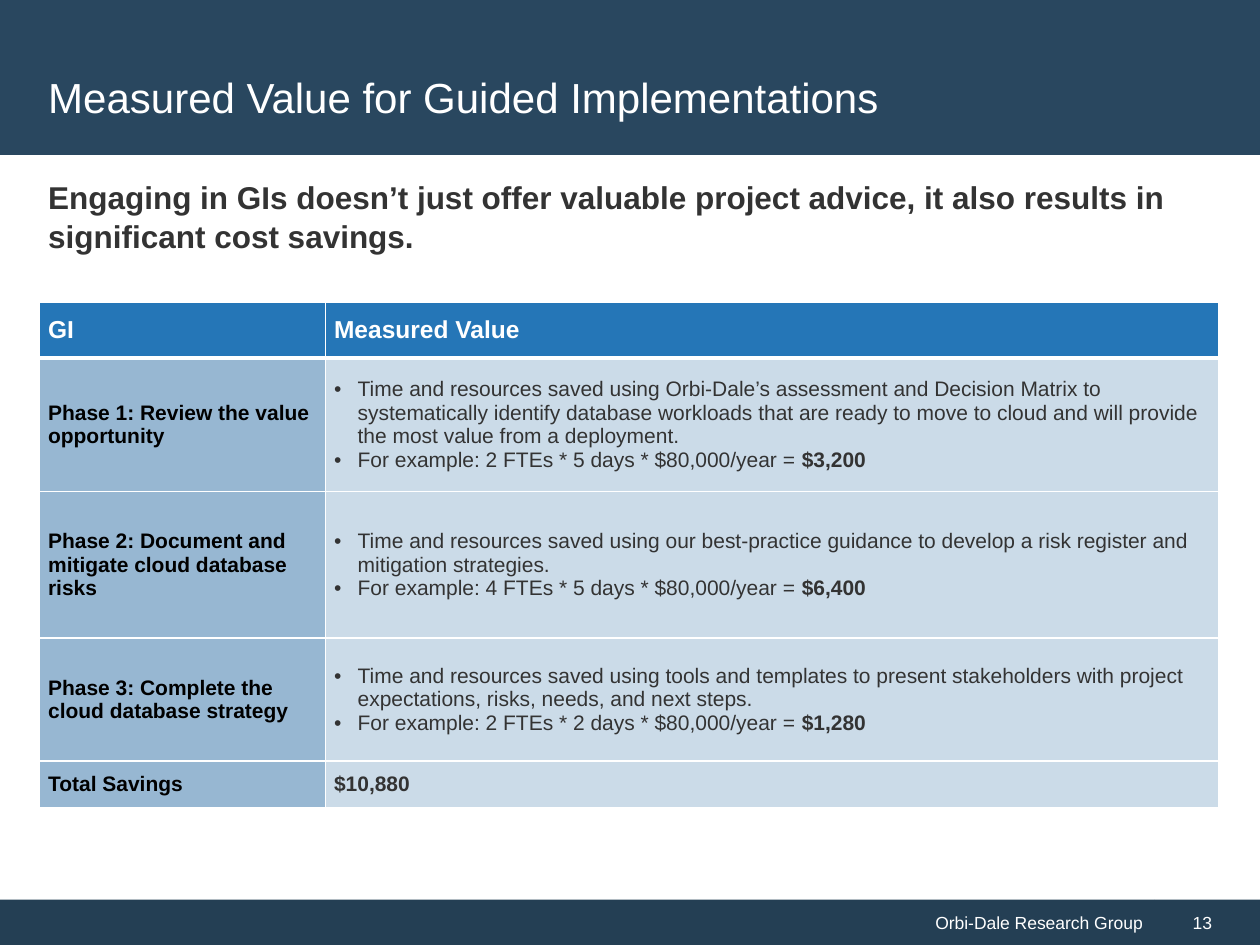
"""Build the slide on the measured value of guided implementations."""
from lxml import etree
from pptx import Presentation
from pptx.dml.color import RGBColor
from pptx.enum.shapes import MSO_SHAPE
from pptx.enum.text import MSO_ANCHOR, PP_ALIGN
from pptx.oxml.ns import qn
from pptx.util import Pt

RECTANGLE = MSO_SHAPE.RECTANGLE
TOP, MIDDLE = MSO_ANCHOR.TOP, MSO_ANCHOR.MIDDLE
LEFT, RIGHT = PP_ALIGN.LEFT, PP_ALIGN.RIGHT
WHITE = RGBColor(0xFF, 0xFF, 0xFF)
BLACK = RGBColor(0x00, 0x00, 0x00)
DARK_GREY = RGBColor(0x33, 0x33, 0x33)
BANNER_BLUE = RGBColor(0x29, 0x47, 0x5F)
FOOTER_BLUE = RGBColor(0x24, 0x3F, 0x54)
HEADER_BLUE = RGBColor(0x25, 0x76, 0xB7)
PHASE_BLUE = RGBColor(0x97, 0xB7, 0xD2)
VALUE_BLUE = RGBColor(0xCB, 0xDB, 0xE8)
FONT = "Arial"

TITLE = "Measured Value for Guided Implementations"
MESSAGE = ("Engaging in GIs doesn’t just offer valuable project advice, "
           "it also results in significant cost savings.")
PUBLISHER = "Orbi-Dale Research Group"
PAGE = "13"
HEADINGS = ("GI", "Measured Value")
PHASES = [
    ("Phase 1: Review the value opportunity",
     "Time and resources saved using Orbi-Dale’s assessment and Decision Matrix to "
     "systematically identify database workloads that are ready to move to cloud and "
     "will provide the most value from a deployment.",
     "For example: 2 FTEs * 5 days * $80,000/year = ", "$3,200"),
    ("Phase 2: Document and mitigate cloud database risks",
     "Time and resources saved using our best-practice guidance to develop a risk "
     "register and mitigation strategies.",
     "For example: 4 FTEs * 5 days * $80,000/year = ", "$6,400"),
    ("Phase 3: Complete the cloud database strategy",
     "Time and resources saved using tools and templates to present stakeholders with "
     "project expectations, risks, needs, and next steps.",
     "For example: 2 FTEs * 2 days * $80,000/year = ", "$1,280"),
]
TOTAL = ("Total Savings", "$10,880")

SLIDE_WIDTH, SLIDE_HEIGHT = 720, 540
BANNER_HEIGHT = 88.5
FOOTER_TOP, PAGE_LEFT = 514, 660
TABLE_LEFT, TABLE_TOP = 22.5, 173
COLUMN_WIDTHS = (163.4, 510.5)
ROW_HEIGHTS = (31.5, 76.5, 83.5, 70.5, 26.5)
CELL_MARGIN = 5
BULLET_INDENT = 13.5


def style(paragraph, size, color, bold=None):
    font = paragraph.font
    font.name, font.size, font.bold = FONT, Pt(size), bold
    font.color.rgb = color


def add_band(slide, left, top, width, height, fill):
    band = slide.shapes.add_shape(RECTANGLE, Pt(left), Pt(top), Pt(width), Pt(height))
    band.shadow.inherit = False
    band.fill.solid()
    band.fill.fore_color.rgb = fill
    band.line.fill.background()
    return band


def add_footer_part(slide, left, right, text, align, indent):
    band = add_band(slide, left, FOOTER_TOP, right - left, SLIDE_HEIGHT - FOOTER_TOP, FOOTER_BLUE)
    band.text_frame.vertical_anchor = MIDDLE
    line = band.text_frame.paragraphs[0]
    line.text, line.alignment = text, align
    line._p.get_or_add_pPr().set("marL", str(Pt(indent)))
    style(line, 10, WHITE)


def add_text(slide, left, top, width, height, text, anchor, size, color, bold=None):
    frame = slide.shapes.add_textbox(Pt(left), Pt(top), Pt(width), Pt(height)).text_frame
    frame.word_wrap = True
    frame.vertical_anchor = anchor
    line = frame.paragraphs[0]
    line.text = text
    style(line, size, color, bold)
    return line


def add_bullet(paragraph):
    properties = paragraph._p.get_or_add_pPr()
    properties.set("marL", str(Pt(BULLET_INDENT)))
    properties.set("indent", str(-Pt(BULLET_INDENT)))
    etree.SubElement(properties, qn("a:buFont")).set("typeface", FONT)
    etree.SubElement(properties, qn("a:buChar")).set("char", "•")


def format_cell(cell, fill, bottom_width=1):
    cell.vertical_anchor = MIDDLE
    cell.margin_left = cell.margin_right = Pt(CELL_MARGIN)
    cell.margin_top = cell.margin_bottom = 0
    properties = cell._tc.get_or_add_tcPr()
    for side, width in (("L", 1), ("R", 1), ("T", 1), ("B", bottom_width)):
        border = etree.SubElement(properties, qn(f"a:ln{side}"), w=str(Pt(width)))
        solid = etree.SubElement(border, qn("a:solidFill"))
        etree.SubElement(solid, qn("a:srgbClr"), val=str(WHITE))
    cell.fill.solid()
    cell.fill.fore_color.rgb = fill


def fill_cell(cell, text, fill, size, color, bottom_width=1):
    format_cell(cell, fill, bottom_width)
    cell.text = text
    style(cell.text_frame.paragraphs[0], size, color, True)


def fill_value(cell, benefit, example, saving):
    format_cell(cell, VALUE_BLUE)
    first = cell.text_frame.paragraphs[0]
    second = cell.text_frame.add_paragraph()
    first.text = benefit
    second.add_run().text = example
    amount = second.add_run()
    amount.text = saving
    for line in (first, second):
        style(line, 12, DARK_GREY, False)
        add_bullet(line)
    amount.font.bold = True


def add_savings_table(slide):
    table = slide.shapes.add_table(
        len(ROW_HEIGHTS), len(COLUMN_WIDTHS), Pt(TABLE_LEFT), Pt(TABLE_TOP),
        Pt(sum(COLUMN_WIDTHS)), Pt(sum(ROW_HEIGHTS))).table
    for column, width in zip(table.columns, COLUMN_WIDTHS):
        column.width = Pt(width)
    for row, height in zip(table.rows, ROW_HEIGHTS):
        row.height = Pt(height)
    for column, heading in enumerate(HEADINGS):
        fill_cell(table.cell(0, column), heading, HEADER_BLUE, 14, WHITE, 3)
    for row, (phase, *value) in enumerate(PHASES, 1):
        fill_cell(table.cell(row, 0), phase, PHASE_BLUE, 12, BLACK)
        fill_value(table.cell(row, 1), *value)
    last = len(ROW_HEIGHTS) - 1
    fill_cell(table.cell(last, 0), TOTAL[0], PHASE_BLUE, 12, BLACK)
    fill_cell(table.cell(last, 1), TOTAL[1], VALUE_BLUE, 12, DARK_GREY)


def main():
    deck = Presentation()
    deck.slide_width, deck.slide_height = Pt(SLIDE_WIDTH), Pt(SLIDE_HEIGHT)
    slide = deck.slides.add_slide(deck.slide_layouts[6])
    add_footer_part(slide, 0, PAGE_LEFT, PUBLISHER, RIGHT, 21)
    add_footer_part(slide, PAGE_LEFT, SLIDE_WIDTH, PAGE, LEFT, 14.4)
    add_band(slide, 0, 0, SLIDE_WIDTH, BANNER_HEIGHT, BANNER_BLUE)
    add_text(slide, 20.5, 20.5, 679, 69, TITLE, MIDDLE, 24, WHITE)
    add_savings_table(slide)
    message = add_text(slide, 20.5, 97, 679, 52, MESSAGE, TOP, 18, DARK_GREY, True)
    message.line_spacing = 1.05
    deck.save("out.pptx")


if __name__ == "__main__":
    main()
